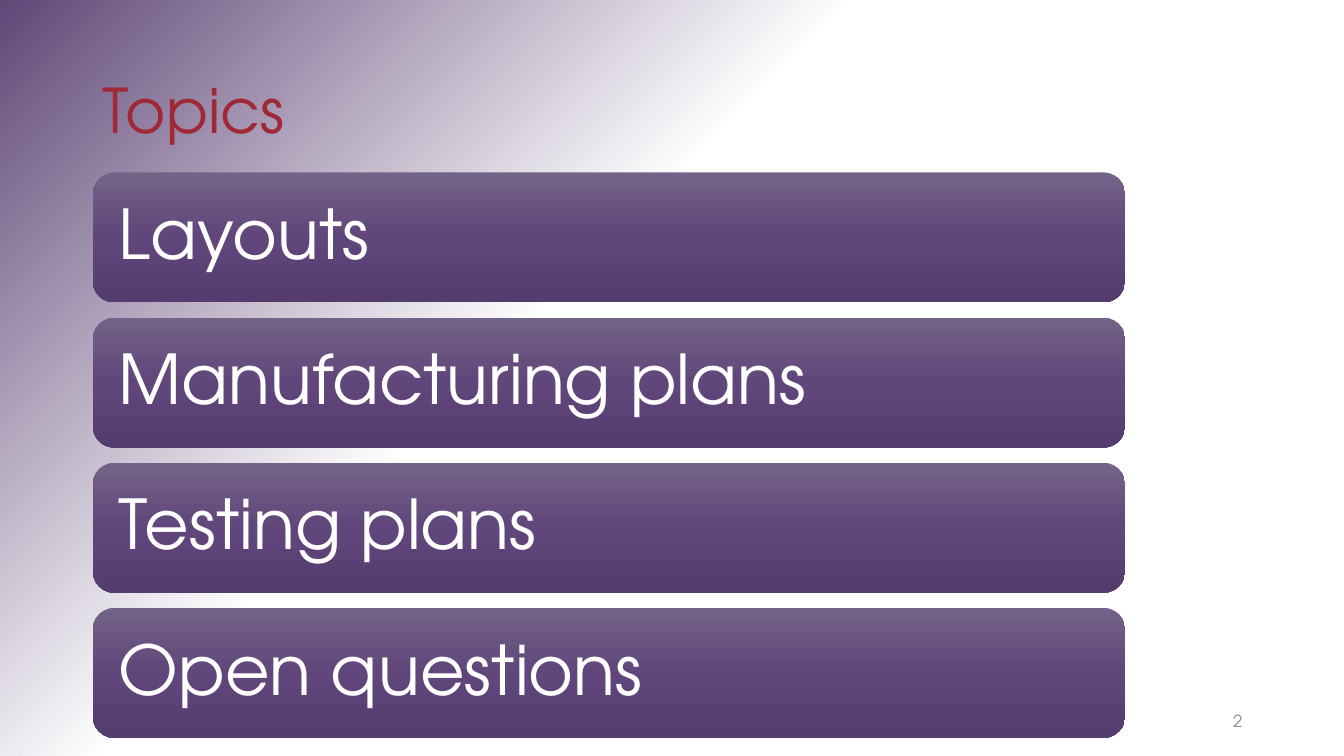
from lxml.etree import SubElement
from pptx import Presentation
from pptx.dml.color import RGBColor
from pptx.enum.shapes import MSO_SHAPE as SHAPE
from pptx.enum.text import MSO_ANCHOR as ANCHOR, PP_ALIGN as ALIGN
from pptx.oxml.ns import qn
from pptx.util import Inches, Pt

WHITE = RGBColor(0xFF, 0xFF, 0xFF)
RED = RGBColor(0x9F, 0x29, 0x36)
GRAY = RGBColor(0x8C, 0x8C, 0x8C)
PURPLE = RGBColor(0x60, 0x48, 0x78)
BAR_TOP = RGBColor(0x74, 0x63, 0x88)
BAR_MID = RGBColor(0x60, 0x46, 0x7A)
BAR_END = RGBColor(0x55, 0x3C, 0x6F)

# Stops are (position %, colour, opacity %)
BACKDROP = [(59, WHITE, 16), (100, PURPLE, 47)]
BAR_FILL = [(0, BAR_TOP, 100), (50, BAR_MID, 100), (100, BAR_END, 100)]

TOPICS = ["Layouts", "Manufacturing plans", "Testing plans", "Open questions"]
BAR_LEFT, BAR_Y, BAR_W, BAR_H = 0.92, 1.71, 10.24, 1.29
BAR_STEP = 1.44
BAR_INSET = 0.06


class Deck:
    font = "TeX Gyre Adventor"

    def __init__(self, prs):
        self.s = prs.slides.add_slide(prs.slide_layouts[6])

    def gradient(self, fill, element, stops, angle):
        fill.gradient()
        fill.gradient_angle = -angle % 360
        stop_list = element.xpath(".//a:gsLst")[0]
        for old in list(stop_list):
            stop_list.remove(old)
        for pos, color, opacity in stops:
            gs = SubElement(stop_list, qn("a:gs"), pos=str(pos * 1000))
            clr = SubElement(gs, qn("a:srgbClr"), val=str(color))
            if opacity < 100:
                SubElement(clr, qn("a:alpha"), val=str(opacity * 1000))

    def background(self, stops, angle):
        self.gradient(self.s.background.fill, self.s.element, stops, angle)

    def bar(self, x, y, w, h):
        sp = self.s.shapes.add_shape(
            SHAPE.ROUNDED_RECTANGLE, Inches(x), Inches(y), Inches(w), Inches(h))
        sp.shadow.inherit = False
        sp.line.fill.background()
        self.gradient(sp.fill, sp.element, BAR_FILL, 90)

    def text(self, text, x, y, w, h, size, color, inset=None, **layout):
        tf = self.s.shapes.add_textbox(
            Inches(x), Inches(y), Inches(w), Inches(h)).text_frame
        frame = {"word_wrap": True, "vertical_anchor": ANCHOR.MIDDLE}
        if inset is not None:
            for side in ("left", "top", "right", "bottom"):
                frame[f"margin_{side}"] = Inches(inset)
        p = tf.paragraphs[0]
        r = p.add_run()
        r.text = text
        r.font.color.rgb = color
        style = {"name": self.font, "size": Pt(size)}
        for target, values in ((tf, frame), (p, layout), (r.font, style)):
            for name, value in values.items():
                setattr(target, name, value)


def main():
    prs = Presentation()
    prs.slide_width, prs.slide_height = Inches(13.33), Inches(7.5)
    deck = Deck(prs)
    deck.background(BACKDROP, 225)

    # Title and slide number
    deck.text("Topics", 0.92, 0.4, 11.5, 1.45, 44, RED, line_spacing=0.9)
    deck.text("2", 9.42, 6.95, 3, 0.4, 12, GRAY, alignment=ALIGN.RIGHT)

    # Topic bars
    for i, topic in enumerate(TOPICS):
        y = BAR_Y + i * BAR_STEP
        deck.bar(BAR_LEFT, y, BAR_W, BAR_H)
        deck.text(topic, BAR_LEFT + BAR_INSET, y + BAR_INSET,
                  BAR_W - 2 * BAR_INSET, BAR_H - 2 * BAR_INSET,
                  49, WHITE, inset=0.2, line_spacing=0.9)

    prs.save("out.pptx")


if __name__ == "__main__":
    main()
